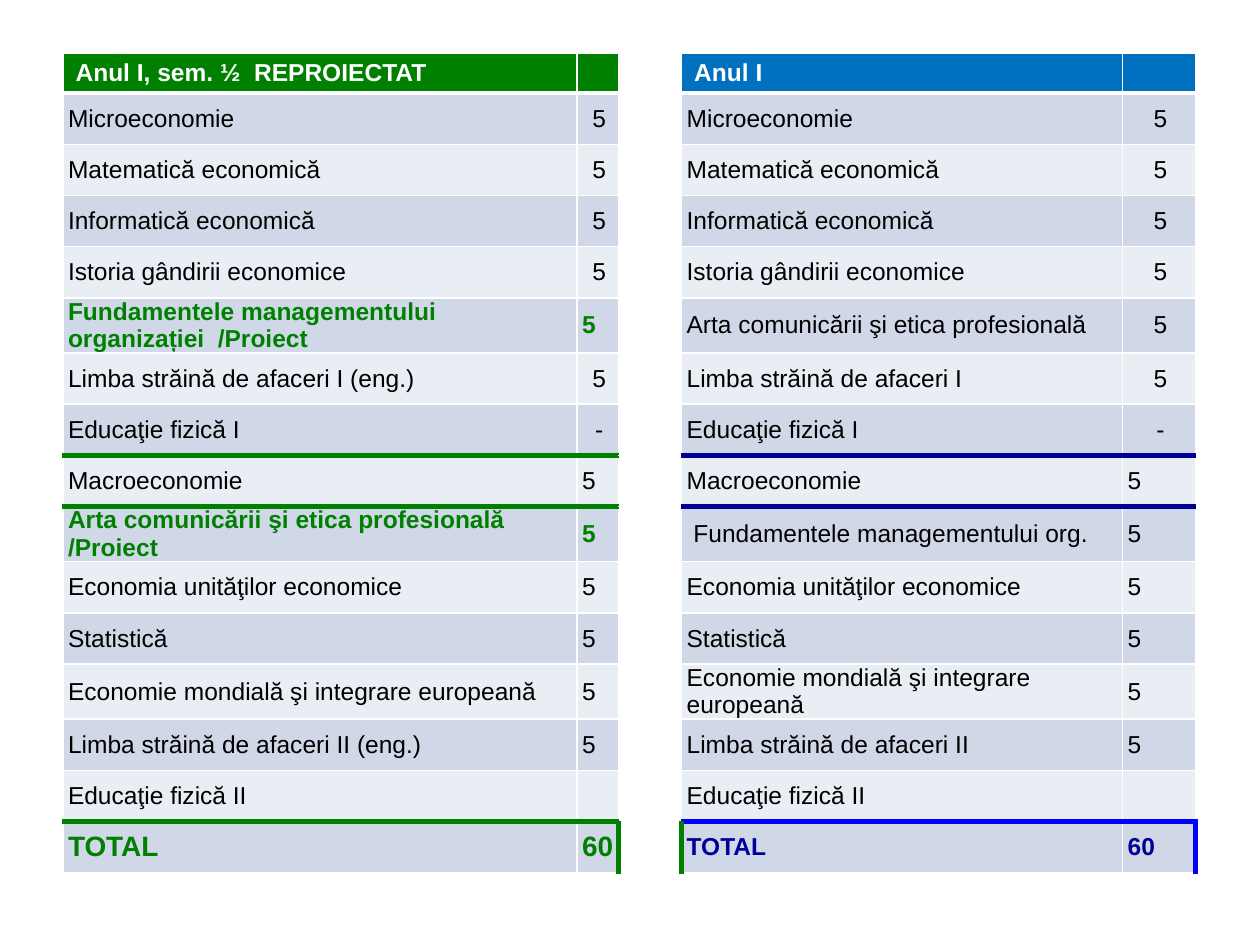
from dataclasses import dataclass

from lxml.etree import SubElement
from pptx import Presentation
from pptx.dml.color import RGBColor
from pptx.enum.text import MSO_ANCHOR as Anchor, PP_ALIGN as Align
from pptx.oxml.ns import qn
from pptx.table import _Cell as Cell
from pptx.util import Inches, Pt

COLORS = {
    "white": "FFFFFF",
    "black": "000000",
    "green": "008000",
    "header_blue": "0070C0",
    "navy": "000099",
    "blue": "0000FF",
    "band_dark": "D0D8E8",
    "band_light": "E9EDF4",
}
COLUMN_WIDTHS = (4.08, 0.33, 0.5, 3.5, 0.58)
HEADER_HEIGHT = 0.17
BODY_HEIGHT = 6.1
SIDES = ("L", "R", "T", "B")
THIN, THICK = 1, 3


@dataclass(frozen=True)
class Course:
    redesigned: str
    current: str
    credits: str = "5"
    is_project: bool = False
    is_centered: bool = False


@dataclass(frozen=True)
class Plan:
    column: int
    title: str
    header: str
    rule: str
    total_rule: str
    total_text: str
    total_size: int


@dataclass(frozen=True)
class Style:
    color: str = "black"
    bold: bool = False
    size: int = 14
    align: Align = Align.LEFT


FIRST_SEMESTER = [
    *(Course(name, name, is_centered=True) for name in (
        "Microeconomie",
        "Matematică economică",
        "Informatică economică",
        "Istoria gândirii economice",
    )),
    Course("Fundamentele managementului organizației  /Proiect",
           "Arta comunicării şi etica profesională", is_project=True, is_centered=True),
    Course("Limba străină de afaceri I (eng.)", "Limba străină de afaceri I", is_centered=True),
    Course("Educaţie fizică I", "Educaţie fizică I", "-", is_centered=True),
]
SECOND_SEMESTER = [
    Course("Macroeconomie", "Macroeconomie"),
    Course("Arta comunicării şi etica profesională /Proiect",
           " Fundamentele managementului org.", is_project=True),
    *(Course(name, name) for name in (
        "Economia unităţilor economice",
        "Statistică",
        "Economie mondială şi integrare europeană",
    )),
    Course("Limba străină de afaceri II (eng.)", "Limba străină de afaceri II"),
    Course("Educaţie fizică II", "Educaţie fizică II", ""),
]
COURSES = FIRST_SEMESTER + SECOND_SEMESTER
SEMESTER_END = len(FIRST_SEMESTER)
TOTAL_ROW = len(COURSES) + 1
PLANS = (
    Plan(0, "Anul I, sem. ½  REPROIECTAT", "green", "green", "green", "green", 16),
    Plan(3, "Anul I", "header_blue", "navy", "blue", "navy", 14),
)
GAP_COLUMN = 2


def rgb(name: str) -> RGBColor:
    return RGBColor.from_string(COLORS[name])


def rule_below(row: int, plan: Plan) -> tuple[str, int]:
    if row == 0:
        return "white", THICK
    if row in (SEMESTER_END, SEMESTER_END + 1):
        return plan.rule, THICK
    if row == TOTAL_ROW - 1:
        return plan.total_rule, THICK
    return "white", THIN


def paint_cell(cell: Cell, fill: str, borders: dict[str, tuple[str, int]]) -> None:
    properties = cell._tc.get_or_add_tcPr()
    for side in SIDES:
        color, width = borders.get(side, ("white", THIN))
        line = SubElement(properties, qn(f"a:ln{side}"), w=str(Pt(width)))
        solid = SubElement(line, qn("a:solidFill"))
        SubElement(solid, qn("a:srgbClr"), val=COLORS[color])
    cell.fill.solid()
    cell.fill.fore_color.rgb = rgb(fill)


def write_cell(cell: Cell, text: str, style: Style, is_header: bool = False) -> None:
    if not is_header:
        cell.vertical_anchor = Anchor.MIDDLE
        cell.margin_left, cell.margin_right = Inches(0.04), Inches(0.02)
    if not is_header or not text:
        cell.margin_top = cell.margin_bottom = 0
    para = cell.text_frame.paragraphs[0]
    para.alignment = style.align
    if text:
        para.add_run().text = text
    for font in (para.font, *(span.font for span in para.runs)):
        font.name = "Arial"
        font.size = Pt(style.size)
        font.bold = style.bold
        font.color.rgb = rgb(style.color)


def row_content(row: int, plan: Plan) -> tuple[tuple[str, Style], tuple[str, Style]]:
    if row == 0:
        style = Style("white", True)
        return (plan.title, style), ("", style)
    if row == TOTAL_ROW:
        style = Style(plan.total_text, True, plan.total_size)
        return ("TOTAL", style), ("60", style)
    course = COURSES[row - 1]
    is_redesigned = plan.column == 0
    name = course.redesigned if is_redesigned else course.current
    if is_redesigned and course.is_project:
        style = Style("green", True)
        return (name, style), (course.credits, style)
    align = Align.CENTER if course.is_centered else Align.LEFT
    return (name, Style()), (course.credits, Style(align=align))


def fill_plan(table, plan: Plan) -> None:
    for row in range(TOTAL_ROW + 1):
        band = "band_dark" if row % 2 else "band_light"
        fill = plan.header if row == 0 else band
        for offset, (text, style) in enumerate(row_content(row, plan)):
            cell = table.cell(row, plan.column + offset)
            borders = {"B": rule_below(row, plan)}
            if row:
                borders["T"] = rule_below(row - 1, plan)
            if row == TOTAL_ROW and offset == 1:
                borders["R"] = (plan.total_rule, THICK)
            if row == TOTAL_ROW and cell is not None and plan.column + offset == GAP_COLUMN + 1:
                borders["L"] = ("green", THICK)
            paint_cell(cell, fill, borders)
            write_cell(cell, text, style, row == 0)


def fill_gap(table) -> None:
    for row in range(TOTAL_ROW + 1):
        cell = table.cell(row, GAP_COLUMN)
        edge = ("green", THICK) if row == TOTAL_ROW else ("white", THIN)
        paint_cell(cell, "white", {"L": edge, "R": edge})
        write_cell(cell, "", Style())


def main() -> None:
    deck = Presentation()
    deck.slide_width, deck.slide_height = Inches(10), Inches(7.5)
    page = deck.slides.add_slide(deck.slide_layouts[6])
    table = page.shapes.add_table(
        TOTAL_ROW + 1, len(COLUMN_WIDTHS), Inches(0.5), Inches(0.42), Inches(9), Inches(6.6)
    ).table
    for column, width in zip(table.columns, COLUMN_WIDTHS):
        column.width = Inches(width)
    for index, row in enumerate(table.rows):
        row.height = Inches(BODY_HEIGHT / TOTAL_ROW if index else HEADER_HEIGHT)
    for plan in PLANS:
        fill_plan(table, plan)
    fill_gap(table)
    deck.save("out.pptx")


if __name__ == "__main__":
    main()
